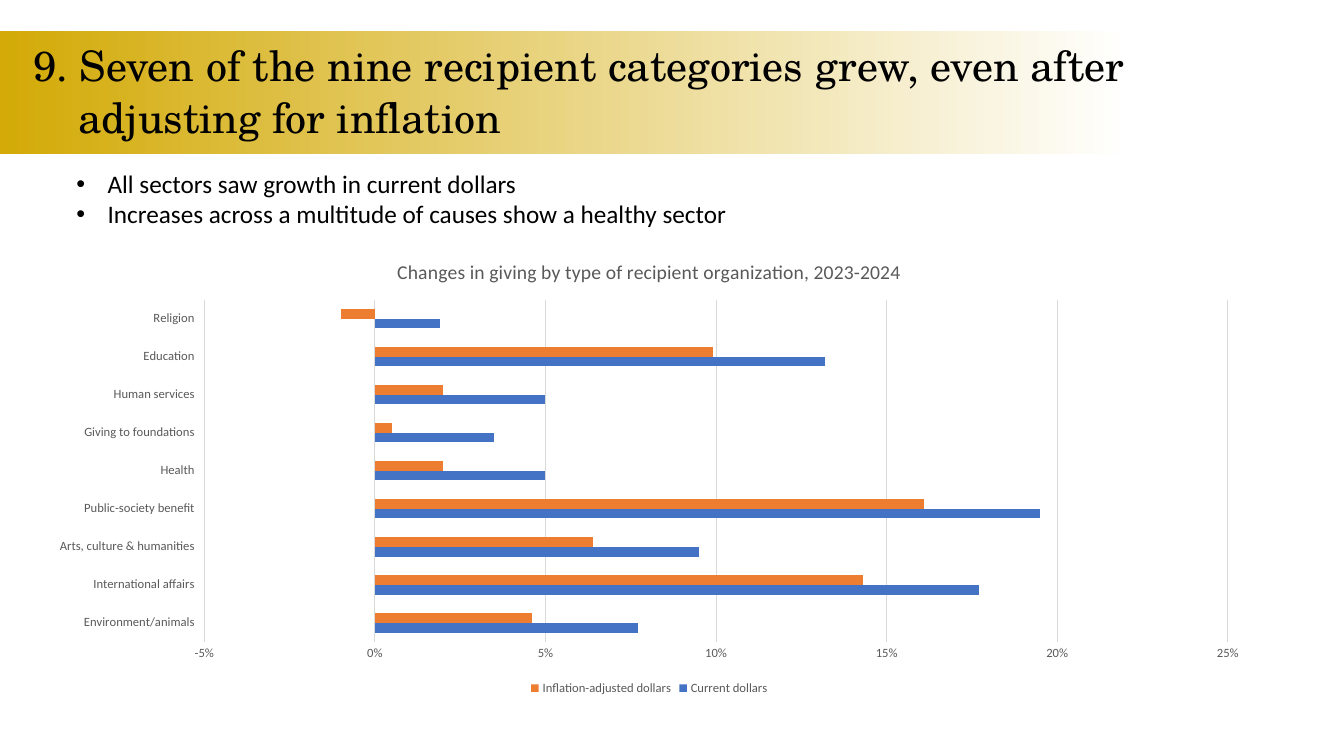
from pptx import Presentation
from pptx import util as u
from pptx.chart.data import CategoryChartData
from pptx.dml.color import RGBColor
from pptx.enum import chart as ch, shapes, text
from pptx.oxml import parse_xml
from pptx.oxml.ns import nsdecls

PX = 9144
HUE = {"gold": "D3AA07", "white": "FFFFFF", "ink": "000000", "gray": "595959",
       "grid": "D9D9D9", "blue": "4472C4", "orange": "ED7D31"}
HEAD = {"name": "TeX Gyre Schola", "size": u.Pt(30)}
BODY = {"name": "Calibri", "size": u.Pt(18)}
LABEL = {"name": "Calibri", "size": u.Pt(9), "bold": False}
TITLE = {"name": "Calibri", "size": u.Pt(14), "bold": False}

LINES = ["9. Seven of the nine recipient categories grew, even after",
         "adjusting for inflation"]
POINTS = ["All sectors saw growth in current dollars",
          "Increases across a multitude of causes show a healthy sector"]
CAPTION = "Changes in giving by type of recipient organization, 2023-2024"
SERIES = [("Current dollars", "blue"), ("Inflation-adjusted dollars", "orange")]
ROWS = [("Environment/animals", 0.077, 0.046),
        ("International affairs", 0.177, 0.143),
        ("Arts, culture & humanities", 0.095, 0.064),
        ("Public-society benefit", 0.195, 0.161),
        ("Health", 0.05, 0.02),
        ("Giving to foundations", 0.035, 0.005),
        ("Human services", 0.05, 0.02),
        ("Education", 0.132, 0.099),
        ("Religion", 0.019, -0.01)]


def rgb(key):
    return RGBColor.from_string(HUE[key])


def emu(*box):
    return [n * PX for n in box]


def style(item, form):
    for key, val in form.items():
        setattr(item, key, val)


def ink(font, form, key):
    style(font, form)
    font.color.rgb = rgb(key)


def rule(line):
    line.color.rgb = rgb("grid")
    line.width = u.Pt(0.75)


def frame(slide, box, anchor):
    area = slide.shapes.add_textbox(*emu(*box)).text_frame
    style(area, {"word_wrap": True, "vertical_anchor": anchor})
    return area


def band(slide, x, y, w, h):
    bar = slide.shapes.add_shape(shapes.MSO_SHAPE.RECTANGLE, *emu(x, y, w, h))
    bar.shadow.inherit = False
    bar.line.fill.background()
    bar.fill.gradient()
    bar.fill.gradient_angle = 0
    for stop, key, pos in zip(bar.fill.gradient_stops, ("gold", "white"), (0, 0.98)):
        stop.color.rgb = rgb(key)
        stop.position = pos


def header(slide, x, y, w, h):
    band(slide, x, y, w, h)
    spots = [(x + 23, y + 7, 1150, 58), (x + 68, y + 63, 1150, 50)]
    for line, spot in zip(LINES, spots):
        para = frame(slide, spot, text.MSO_ANCHOR.MIDDLE).paragraphs[0]
        para.text = line
        para.line_spacing = 0.9
        ink(para.font, HEAD, "ink")


def bullets(slide, x, y, w, h):
    area = frame(slide, (x, y, w, h), text.MSO_ANCHOR.TOP)
    for i, point in enumerate(POINTS):
        para = area.add_paragraph() if i else area.paragraphs[0]
        para.text = point
        props = para._p.get_or_add_pPr()
        props.set("marL", str(31 * PX))
        props.set("indent", str(-31 * PX))
        for tag in ('buFont %s typeface="Arial"', 'buChar %s char="•"'):
            props.append(parse_xml(f"<a:{tag % nsdecls('a')}/>"))
        ink(para.font, BODY, "ink")


def growth(slide, x, y, w, h):
    names, *cols = zip(*ROWS)
    data = CategoryChartData(number_format="0%")
    data.categories = names
    for (name, _), vals in zip(SERIES, cols):
        data.add_series(name, vals)
    kind = ch.XL_CHART_TYPE.BAR_CLUSTERED
    chart = slide.shapes.add_chart(kind, *emu(x, y, w, h), data).chart
    ink(chart.font, LABEL, "gray")

    chart.has_title = True
    para = chart.chart_title.text_frame.paragraphs[0]
    para.text = CAPTION
    ink(para.runs[0].font, TITLE, "gray")
    chart.chart_title.include_in_layout = False

    chart.has_legend = True
    style(chart.legend, {"position": ch.XL_LEGEND_POSITION.BOTTOM,
                         "include_in_layout": False})
    ink(chart.legend.font, LABEL, "gray")

    plot = chart.plots[0]
    style(plot, {"gap_width": 182, "overlap": 0, "vary_by_categories": False})
    for ser, (_, key) in zip(plot.series, SERIES):
        ser.invert_if_negative = False
        ser.format.fill.solid()
        ser.format.fill.fore_color.rgb = rgb(key)

    cat, val = chart.category_axis, chart.value_axis
    for axis in (cat, val):
        style(axis, {"major_tick_mark": ch.XL_TICK_MARK.NONE,
                     "minor_tick_mark": ch.XL_TICK_MARK.NONE})
        ink(axis.tick_labels.font, LABEL, "gray")
    cat.tick_label_position = ch.XL_TICK_LABEL_POSITION.LOW
    rule(cat.format.line)
    style(val, {"minimum_scale": -0.05, "maximum_scale": 0.25,
                "major_unit": 0.05, "has_major_gridlines": True})
    style(val.tick_labels, {"number_format": "0%", "number_format_is_linked": False})
    val.format.line.fill.background()
    rule(val.major_gridlines.format.line)


def main():
    deck = Presentation()
    style(deck, {"slide_width": 1333 * PX, "slide_height": 750 * PX})
    slide = deck.slides.add_slide(deck.slide_layouts[6])
    header(slide, 0, 31, 1144, 122)
    bullets(slide, 66, 162, 1107, 101)
    growth(slide, 35, 238, 1218, 456)
    deck.save("out.pptx")


if __name__ == "__main__":
    main()
